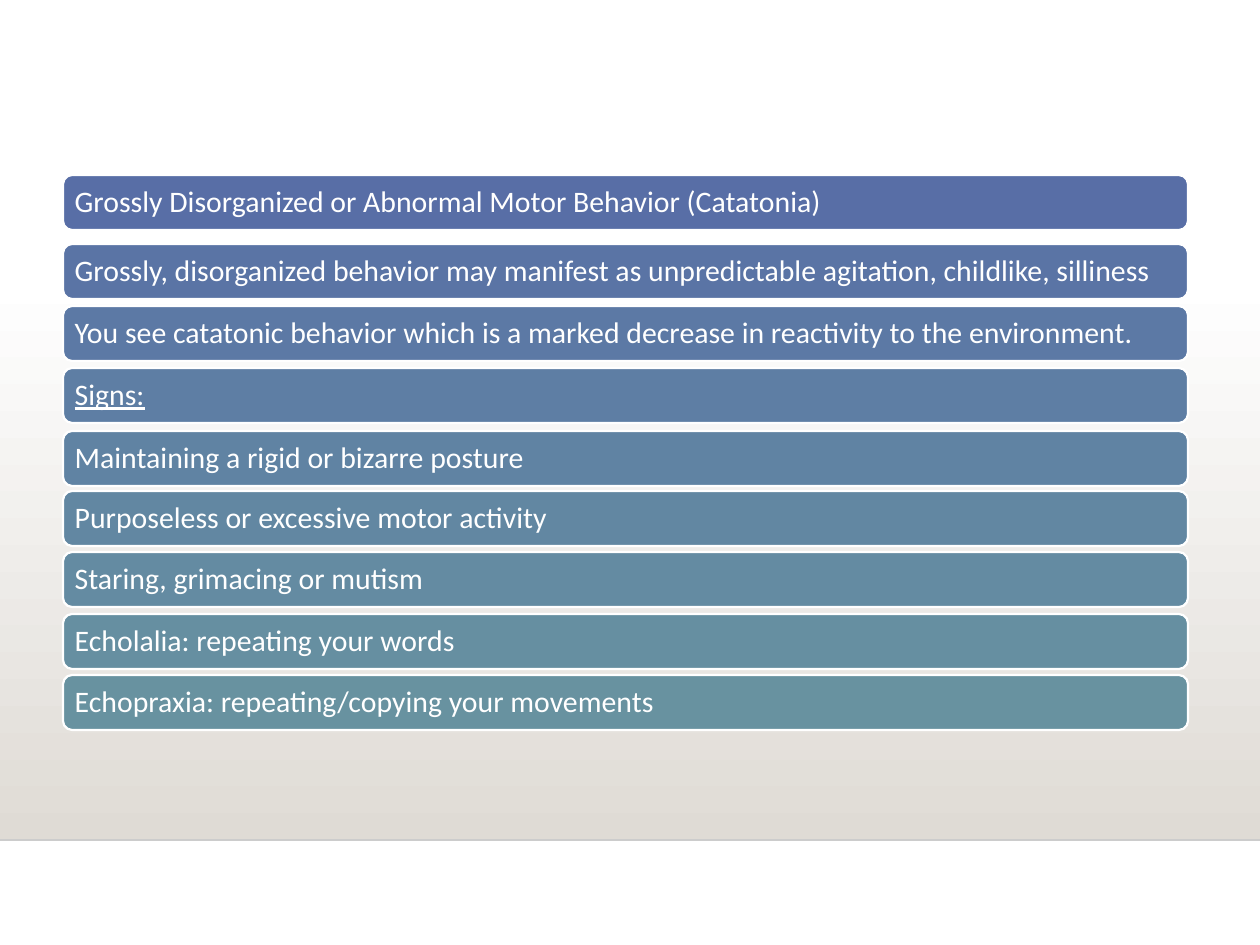
from lxml import etree
from pptx import Presentation
from pptx.dml.color import RGBColor
from pptx.enum.shapes import MSO_CONNECTOR, MSO_SHAPE
from pptx.enum.text import MSO_ANCHOR, PP_ALIGN
from pptx.oxml.ns import qn
from pptx.util import Pt

# Content: top in px, fill, underlined, text
BARS = [
    (175, "586EA6", False, "Grossly Disorganized or Abnormal Motor Behavior (Catatonia)"),
    (244, "5A74A5", False, "Grossly, disorganized behavior may manifest as unpredictable "
                           "agitation, childlike, silliness"),
    (306, "5C79A5", False, "You see catatonic behavior which is a marked decrease in "
                           "reactivity to the environment."),
    (368, "5E7EA4", True, "Signs:"),
    (431, "6083A3", False, "Maintaining a rigid or bizarre posture"),
    (491, "6287A2", False, "Purposeless or excessive motor activity"),
    (552, "648BA2", False, "Staring, grimacing or mutism"),
    (614, "668FA1", False, "Echolalia: repeating your words"),
    (675, "6892A0", False, "Echopraxia: repeating/copying your movements"),
]
SLIDE_WIDTH, SLIDE_HEIGHT = 1260, 945
BAR_LEFT, BAR_WIDTH, BAR_HEIGHT = 63, 1125, 55
FLOOR_TOP, FLOOR_BOTTOM = 277, 840
INSET = 9
WHITE, FLOOR, RULE = "FFFFFF", "DFDBD5", "CCCCCC"


def px(value):
    return round(value * 914400 / 126)


def color(value):
    return RGBColor.from_string(value)


def set_values(target, values):
    for name, value in values.items():
        setattr(target, name, value)


def add_floor(slide):
    shape = slide.shapes.add_shape(MSO_SHAPE.RECTANGLE, 0, px(FLOOR_TOP),
                                   px(SLIDE_WIDTH), px(FLOOR_BOTTOM - FLOOR_TOP))
    shape.shadow.inherit = False
    shape.line.fill.background()
    shape.fill.gradient()
    shape.fill.gradient_angle = 270
    for stop, value in zip(shape.fill.gradient_stops, (WHITE, FLOOR)):
        stop.color.rgb = color(value)

    line = slide.shapes.add_connector(MSO_CONNECTOR.STRAIGHT, 0, px(FLOOR_BOTTOM),
                                      px(SLIDE_WIDTH), px(FLOOR_BOTTOM))
    line.line.color.rgb = color(RULE)
    line.line.width = Pt(1)
    etree.SubElement(line._element.spPr, qn("a:effectLst"))


def add_bar(slide, top, fill, underlined, text):
    shape = slide.shapes.add_shape(MSO_SHAPE.ROUNDED_RECTANGLE, px(BAR_LEFT), px(top),
                                   px(BAR_WIDTH), px(BAR_HEIGHT))
    shape.shadow.inherit = False
    shape.fill.solid()
    shape.fill.fore_color.rgb = color(fill)
    shape.line.color.rgb = color(WHITE)
    shape.line.width = Pt(1.25)

    frame = shape.text_frame
    set_values(frame, {"word_wrap": True, "vertical_anchor": MSO_ANCHOR.MIDDLE,
                       "margin_left": px(INSET), "margin_right": px(INSET),
                       "margin_top": px(INSET), "margin_bottom": px(INSET)})
    paragraph = frame.paragraphs[0]
    set_values(paragraph, {"alignment": PP_ALIGN.LEFT, "line_spacing": 0.9})
    run = paragraph.add_run()
    run.text = text
    set_values(run.font, {"name": "Calibri", "size": Pt(17), "underline": underlined})
    run.font.color.rgb = color(WHITE)


def main():
    presentation = Presentation()
    set_values(presentation, {"slide_width": px(SLIDE_WIDTH),
                              "slide_height": px(SLIDE_HEIGHT)})
    slide = presentation.slides.add_slide(presentation.slide_layouts[6])

    # Shaded floor and its lower edge
    add_floor(slide)

    # Stack of text bars
    for bar in BARS:
        add_bar(slide, *bar)

    presentation.save("out.pptx")


if __name__ == "__main__":
    main()
